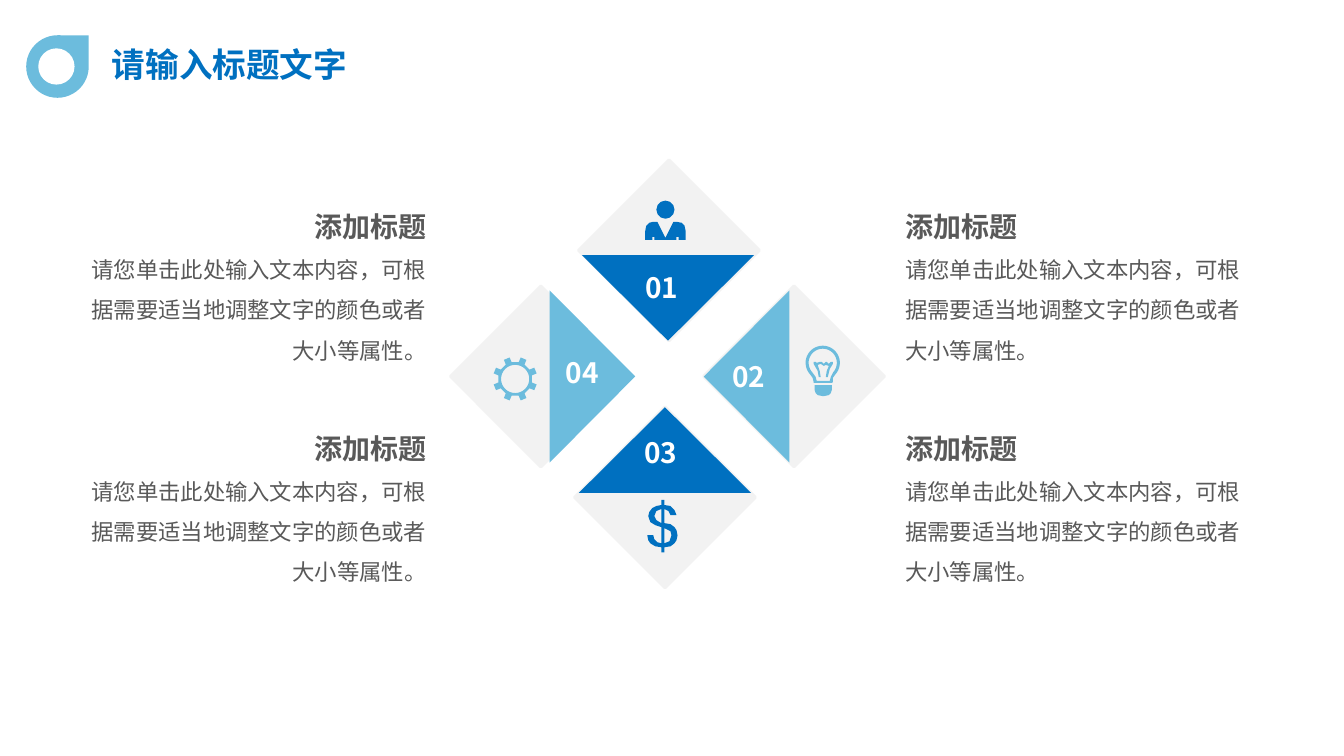
from dataclasses import dataclass
from math import cos, radians, sin

from lxml.etree import Element
from pptx import Presentation
from pptx.dml.color import RGBColor
from pptx.enum.shapes import MSO_SHAPE
from pptx.enum.text import MSO_ANCHOR, MSO_AUTO_SIZE, PP_ALIGN
from pptx.oxml.ns import qn
from pptx.shapes.autoshape import Shape
from pptx.slide import Slide
from pptx.util import Inches, Pt

COLORS = {
    "blue": "0070C0",
    "sky": "6CBCDD",
    "pale": "F2F2F2",
    "gray": "595959",
    "white": "FFFFFF",
}
FONT = "Noto Sans CJK SC"
CAPTION_TITLE = "添加标题"
CAPTION_BODY = "请您单击此处输入文本内容，可根据需要适当地调整文字的颜色或者大小等属性。"

Point = tuple[float, float]
Outline = list[Point]


@dataclass
class Vane:
    label: str
    color: str
    diamond: Point
    triangle: Point
    number: Point
    rotation: int


@dataclass
class Column:
    title_left: float
    title_width: float
    body_left: float
    body_width: float
    align: PP_ALIGN


@dataclass
class Icon:
    color: str
    outlines: list[Outline]


def polar(x: float, y: float, radius: float, angle: float) -> Point:
    return x + radius * cos(radians(angle)), y + radius * sin(radians(angle))


def arc(x: float, y: float, radius: float, start: float, end: float, steps: int = 32) -> Outline:
    return [polar(x, y, radius, start + (end - start) * step / steps) for step in range(steps + 1)]


def gear(x: float, y: float) -> list[Outline]:
    profile = [(0.17, -10.5), (0.22, -8), (0.22, 8), (0.17, 10.5)]
    teeth = [
        polar(x, y, radius, 22.5 + 45 * tooth + offset)
        for tooth in range(8)
        for radius, offset in profile
    ]
    return [teeth, arc(x, y, 0.14, 360, 0)]


VANES = [
    Vane("01", "blue", (6, 1.85), (5.77, 2.53), (6.28, 2.63), 180),
    Vane("02", "sky", (7.24, 3.1), (6.55, 3.31), (7.14, 3.52), 270),
    Vane("03", "blue", (5.96, 4.3), (5.74, 4.04), (6.27, 4.27), 0),
    Vane("04", "sky", (4.73, 3.1), (5.02, 3.31), (5.49, 3.48), 90),
]
COLUMNS = [
    Column(1.62, 2.71, 0.73, 3.6, PP_ALIGN.RIGHT),
    Column(8.88, 2.92, 8.88, 3.65, PP_ALIGN.LEFT),
]
ROW_TOPS = [2.03, 4.23]

BULB_GLASS = [
    arc(8.16, 3.6, 0.17, 137, 403)
    + [(8.26, 3.75), (8.26, 3.79), (8.25, 3.8), (8.07, 3.8), (8.07, 3.79), (8.06, 3.75)],
    arc(8.16, 3.6, 0.14, 403, 137) + [(8.09, 3.74), (8.1, 3.78), (8.23, 3.78), (8.24, 3.74)],
]
BULB_BASE = [[
    (8.08, 3.82), (8.25, 3.82), (8.25, 3.87), (8.24, 3.9), (8.22, 3.92), (8.17, 3.93),
    (8.16, 3.93), (8.11, 3.92), (8.09, 3.9), (8.08, 3.87),
]]
BULB_FILAMENT = [[
    (8.26, 3.61), (8.23, 3.66), (8.21, 3.74), (8.19, 3.74), (8.2, 3.68), (8.22, 3.63),
    (8.19, 3.62), (8.17, 3.63), (8.14, 3.61), (8.11, 3.62), (8.13, 3.68), (8.14, 3.74),
    (8.12, 3.74), (8.11, 3.68), (8.07, 3.61), (8.07, 3.59), (8.09, 3.59), (8.1, 3.6),
    (8.13, 3.59), (8.15, 3.59), (8.17, 3.61), (8.19, 3.59), (8.2, 3.59), (8.22, 3.61),
    (8.24, 3.59), (8.26, 3.59),
]]
DOLLAR = [
    [
        (6.59, 5.19), (6.65, 5.2), (6.69, 5.23), (6.71, 5.26), (6.72, 5.31), (6.71, 5.36),
        (6.69, 5.39), (6.65, 5.42), (6.59, 5.43), (6.59, 5.48), (6.56, 5.48), (6.56, 5.43),
        (6.5, 5.42), (6.45, 5.39), (6.43, 5.36), (6.42, 5.31), (6.48, 5.31), (6.49, 5.35),
        (6.52, 5.38), (6.56, 5.39), (6.56, 5.23), (6.5, 5.21), (6.45, 5.18), (6.43, 5.12),
        (6.44, 5.08), (6.47, 5.04), (6.51, 5.02), (6.56, 5.01), (6.56, 4.96), (6.59, 4.96),
        (6.59, 5.01), (6.65, 5.02), (6.69, 5.06), (6.71, 5.11), (6.65, 5.11), (6.63, 5.07),
        (6.59, 5.05),
    ],
    [(6.56, 5.19), (6.56, 5.05), (6.51, 5.07), (6.49, 5.12), (6.51, 5.16)],
    [(6.59, 5.39), (6.64, 5.37), (6.66, 5.31), (6.65, 5.27), (6.59, 5.24)],
]
SUIT = [[
    (6.47, 2.38), (6.47, 2.35), (6.49, 2.35), (6.49, 2.38), (6.71, 2.38), (6.71, 2.35),
    (6.73, 2.35), (6.73, 2.38), (6.8, 2.38), (6.8, 2.29), (6.79, 2.24), (6.76, 2.21),
    (6.71, 2.2), (6.68, 2.2), (6.6, 2.36), (6.52, 2.2), (6.48, 2.2), (6.44, 2.21),
    (6.41, 2.24), (6.4, 2.29), (6.4, 2.38),
]]
ICONS = [
    Icon("sky", BULB_GLASS),
    Icon("sky", BULB_BASE),
    Icon("sky", BULB_FILAMENT),
    Icon("blue", DOLLAR),
    Icon("sky", gear(5.11, 3.76)),
    Icon("blue", SUIT),
]


def paint(shape: Shape, color: str, line: float = 0) -> None:
    shape.shadow.inherit = False
    shape.fill.solid()
    shape.fill.fore_color.rgb = RGBColor.from_string(COLORS[color])
    if line:
        shape.line.color.rgb = RGBColor.from_string(COLORS[color])
        shape.line.width = Pt(line)
    else:
        shape.line.fill.background()


def add_figure(slide: Slide, kind: MSO_SHAPE, place: Point, extent: Point, color: str,
               rotation: float = 0, line: float = 0) -> None:
    shape = slide.shapes.add_shape(kind, *map(Inches, place + extent))
    shape.rotation = rotation
    paint(shape, color, line)


def add_icon(slide: Slide, icon: Icon) -> None:
    first, *others = [[(Inches(x), Inches(y)) for x, y in outline] for outline in icon.outlines]
    builder = slide.shapes.build_freeform(*first[0])
    builder.add_line_segments(first[1:])
    for outline in others:
        builder.move_to(*outline[0])
        builder.add_line_segments(outline[1:])
    paint(builder.convert_to_shape(), icon.color)


def write(box: Shape, text: str, *, size: float, color: str, bold: bool = False,
          align: PP_ALIGN = PP_ALIGN.LEFT, spacing: float = 1.0) -> None:
    frame = box.text_frame
    frame.word_wrap = True
    frame.auto_size = MSO_AUTO_SIZE.SHAPE_TO_FIT_TEXT
    frame.vertical_anchor = MSO_ANCHOR.TOP
    para = frame.paragraphs[0]
    para.alignment = align
    para.line_spacing = spacing
    span = para.add_run()
    span.text = text
    span.font.name = FONT
    span.font.size = Pt(size)
    span.font.bold = bold
    span.font.color.rgb = RGBColor.from_string(COLORS[color])
    for latin in list(box.element.iter(qn("a:latin"))):
        latin.addnext(Element(qn("a:ea"), typeface=FONT))


def add_text(slide: Slide, place: Point, extent: Point, text: str, **style) -> None:
    write(slide.shapes.add_textbox(*map(Inches, place + extent)), text, **style)


def main() -> None:
    deck = Presentation()
    deck.slide_width, deck.slide_height = Inches(13.33), Inches(7.5)
    slide = deck.slides.add_slide(deck.slide_layouts[5])

    title = slide.shapes.title
    title.left, title.top, title.width, title.height = map(Inches, (1.01, 0.39, 2.61, 0.5))
    write(title, "请输入标题文字", size=24, color="blue", bold=True)
    add_figure(slide, MSO_SHAPE.TEAR, (0.26, 0.35), (0.62, 0.62), "sky")
    add_figure(slide, MSO_SHAPE.OVAL, (0.38, 0.48), (0.36, 0.36), "white")

    for vane in VANES:
        add_figure(slide, MSO_SHAPE.RECTANGLE, vane.diamond, (1.27, 1.27), "pale", 45, 2)
        add_figure(slide, MSO_SHAPE.ISOSCELES_TRIANGLE, vane.triangle, (1.71, 0.85),
                   vane.color, vane.rotation)
        add_text(slide, vane.number, (0.57, 0.44), vane.label, size=20, color="white",
                 bold=True, align=PP_ALIGN.CENTER)
    for icon in ICONS:
        add_icon(slide, icon)
    add_figure(slide, MSO_SHAPE.OVAL, (6.51, 1.99), (0.18, 0.18), "blue")

    for top in ROW_TOPS:
        for column in COLUMNS:
            add_text(slide, (column.title_left, top), (column.title_width, 0.44),
                     CAPTION_TITLE, size=20, color="gray", bold=True, align=column.align)
            add_text(slide, (column.body_left, top + 0.33), (column.body_width, 1.27),
                     CAPTION_BODY, size=16, color="gray", align=column.align, spacing=1.5)
    deck.save("out.pptx")


if __name__ == "__main__":
    main()
